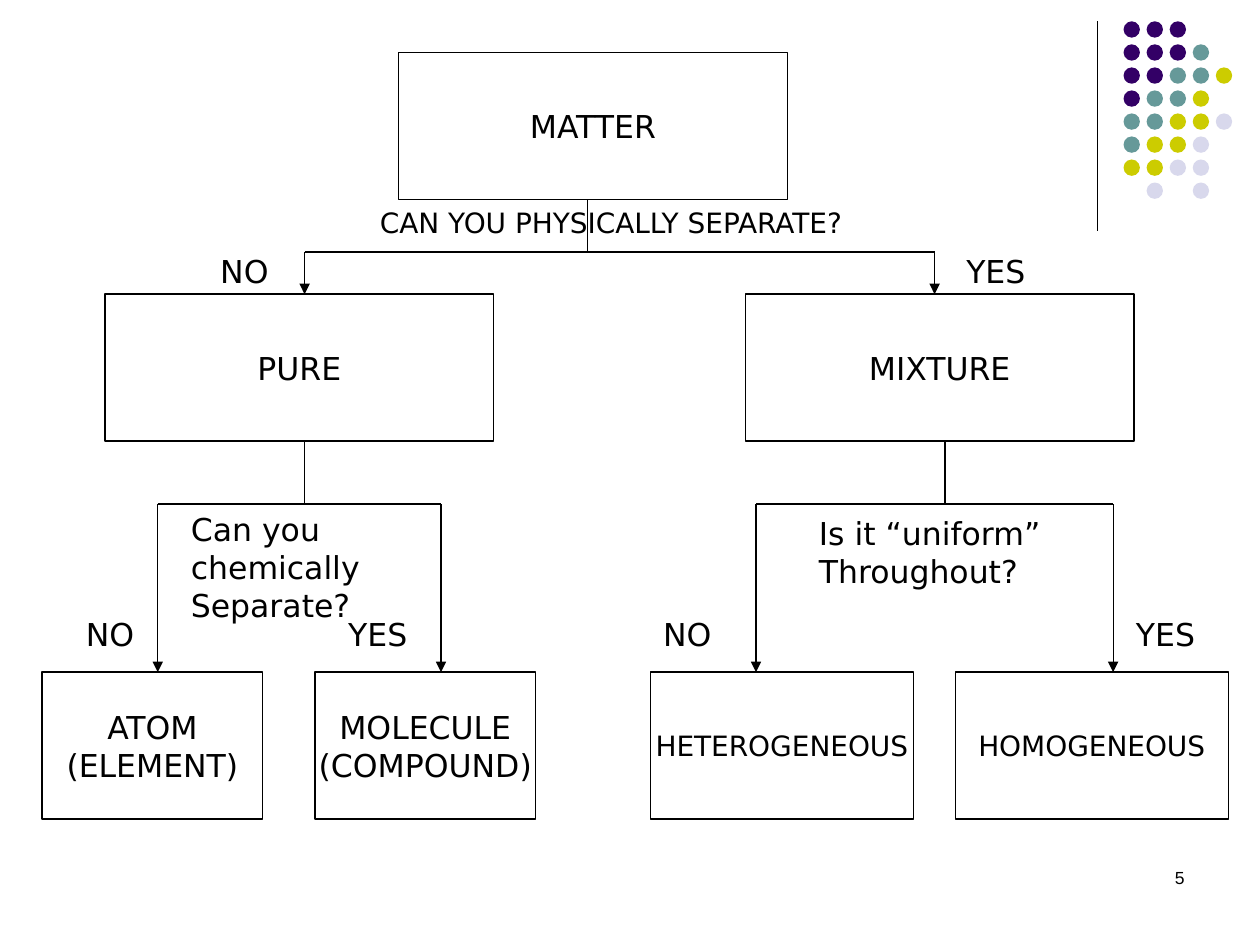
from pptx import Presentation
from pptx.dml.color import RGBColor
from pptx.enum.shapes import MSO_CONNECTOR, MSO_SHAPE
from pptx.enum.text import MSO_ANCHOR, MSO_AUTO_SIZE, PP_ALIGN
from pptx.oxml.ns import qn
from pptx.util import Cm, Pt
from lxml import etree

STRAIGHT = MSO_CONNECTOR.STRAIGHT
RECT, OVAL = MSO_SHAPE.RECTANGLE, MSO_SHAPE.OVAL
MIDDLE, TOP = MSO_ANCHOR.MIDDLE, MSO_ANCHOR.TOP
LEFT, CENTER, RIGHT = PP_ALIGN.LEFT, PP_ALIGN.CENTER, PP_ALIGN.RIGHT
FIT_SHAPE = MSO_AUTO_SIZE.SHAPE_TO_FIT_TEXT

BLACK = RGBColor(0x00, 0x00, 0x00)
DOT_COLORS = {
    "P": RGBColor(0x33, 0x00, 0x66),
    "T": RGBColor(0x66, 0x99, 0x99),
    "Y": RGBColor(0xCC, 0xCC, 0x00),
    "L": RGBColor(0xD8, 0xD8, 0xEC),
}
DOT_ROWS = ["PPP", "PPPT", "PPTTY", "PTTY", "TTYYL", "TYYL", "YYLL", " L L"]
FONT = "DejaVu Sans"
LINE_WIDTH = Pt(0.75)

# Boxes are left, top, width, height in centimetres
NODES = [
    ("MATTER", (8.04, 1.06, 7.83, 2.96), 18),
    ("PURE", (2.12, 5.93, 7.83, 2.96), 18),
    ("MIXTURE", (15.03, 5.93, 7.83, 2.96), 18),
    ("ATOM\n(ELEMENT)", (0.85, 13.55, 4.45, 2.96), 18),
    ("MOLECULE\n(COMPOUND)", (6.35, 13.55, 4.45, 2.96), 18),
    ("HETEROGENEOUS", (13.12, 13.55, 5.29, 2.96), 16),
    ("HOMOGENEOUS", (19.26, 13.55, 5.5, 2.96), 16),
]
# A branch box spans its two arrows; the other offsets count from its corner
BRANCHES = [
    dict(box=(6.14, 4.02, 12.7, 1.91), stem=5.71, bar=1.06,
         question=("CAN YOU PHYSICALLY SEPARATE?", (1.27, 0, 10.29, 0.94), 16),
         no_x=-1.95, yes_x=13.09, answer_y=0.93),
    dict(box=(3.18, 8.89, 5.71, 4.66), stem=2.96, bar=1.27,
         question=("Can you\nchemically\nSeparate?", (0.42, 1.27, 4.09, 2.54), 18),
         no_x=-1.7, yes_x=3.59, answer_y=3.39),
    dict(box=(15.24, 8.89, 7.2, 4.66), stem=3.81, bar=1.27,
         question=("Is it “uniform”\nThroughout?", (1.02, 1.35, 5.05, 1.78), 18),
         no_x=-2.12, yes_x=7.41, answer_y=3.39),
]


def cm(values):
    return [Cm(v) for v in values]


def write(sp, text, size, align=LEFT, font=FONT, **frame):
    tf = sp.text_frame
    for name, value in frame.items():
        setattr(tf, name, value)
    tf.text = text
    for p in tf.paragraphs:
        p.alignment = align
        for name, value in dict(name=font, size=Pt(size)).items():
            setattr(p.font, name, value)
        p.font.color.rgb = BLACK


def add_label(slide, box, text, size):
    sp = slide.shapes.add_textbox(*cm(box))
    write(sp, text, size, word_wrap=False, auto_size=FIT_SHAPE)


def add_line(slide, start, end, arrow=False):
    line = slide.shapes.add_connector(STRAIGHT, *cm(start + end))
    line.line.color.rgb = BLACK
    line.line.width = LINE_WIDTH
    if arrow:
        ln = line.line._get_or_add_ln()
        etree.SubElement(ln, qn("a:tailEnd"), type="triangle")
    etree.SubElement(line._element.spPr, qn("a:effectLst"))


def add_node(slide, box, text, size):
    sp = slide.shapes.add_shape(RECT, *cm(box))
    sp.shadow.inherit = False
    sp.fill.background()
    sp.line.color.rgb = BLACK
    sp.line.width = LINE_WIDTH
    write(sp, text, size, CENTER, word_wrap=False, vertical_anchor=MIDDLE)


def add_branch(slide, box, stem, bar, question, no_x, yes_x, answer_y):
    """Draw a stem, a bar and two arrows, with the question and its answers."""
    left, top, width, height = box
    right, bar_y, bottom = left + width, top + bar, top + height
    add_line(slide, (left + stem, top), (left + stem, bar_y))
    add_line(slide, (left, bar_y), (right, bar_y))
    for x in (left, right):
        add_line(slide, (x, bar_y), (x, bottom), arrow=True)

    labels = [question,
              ("NO", (no_x, answer_y, 1.5, 1.02), 18),
              ("YES", (yes_x, answer_y, 1.73, 1.02), 18)]
    for text, (x, y, w, h), size in labels:
        add_label(slide, (left + x, top + y, w, h), text, size)


def add_dots(slide, box, diameter=0.33):
    left, top, width, height = box
    step_x = (width - diameter) / (max(map(len, DOT_ROWS)) - 1)
    step_y = (height - diameter) / (len(DOT_ROWS) - 1)
    group = slide.shapes.add_group_shape()
    for row, keys in enumerate(DOT_ROWS):
        for col, key in enumerate(keys):
            if key not in DOT_COLORS:
                continue
            dot = group.shapes.add_shape(OVAL, *cm((
                left + col * step_x, top + row * step_y, diameter, diameter)))
            dot.shadow.inherit = False
            dot.fill.solid()
            dot.fill.fore_color.rgb = DOT_COLORS[key]
            dot.line.fill.background()


def add_corner(slide, box):
    """Draw the vertical rule with the dots to its right."""
    left, top, width, height = box
    add_line(slide, (left, top), (left, top + height))
    add_dots(slide, (left + 0.53, top, width - 0.53, 3.58))


def add_page_number(slide, box, number):
    sp = slide.shapes.add_textbox(*cm(box))
    write(sp, number, 10, RIGHT, "Arial", word_wrap=True, vertical_anchor=TOP)


def main():
    prs = Presentation()
    prs.slide_width, prs.slide_height = Cm(25.4), Cm(19.05)
    slide = prs.slides.add_slide(prs.slide_layouts[6])
    add_corner(slide, (22.12, 0.43, 2.72, 4.22))
    for text, box, size in NODES:
        add_node(slide, box, text, size)
    for branch in BRANCHES:
        add_branch(slide, **branch)
    add_page_number(slide, (18.21, 17.36, 5.92, 1.27), "5")
    prs.save("out.pptx")


if __name__ == "__main__":
    main()
